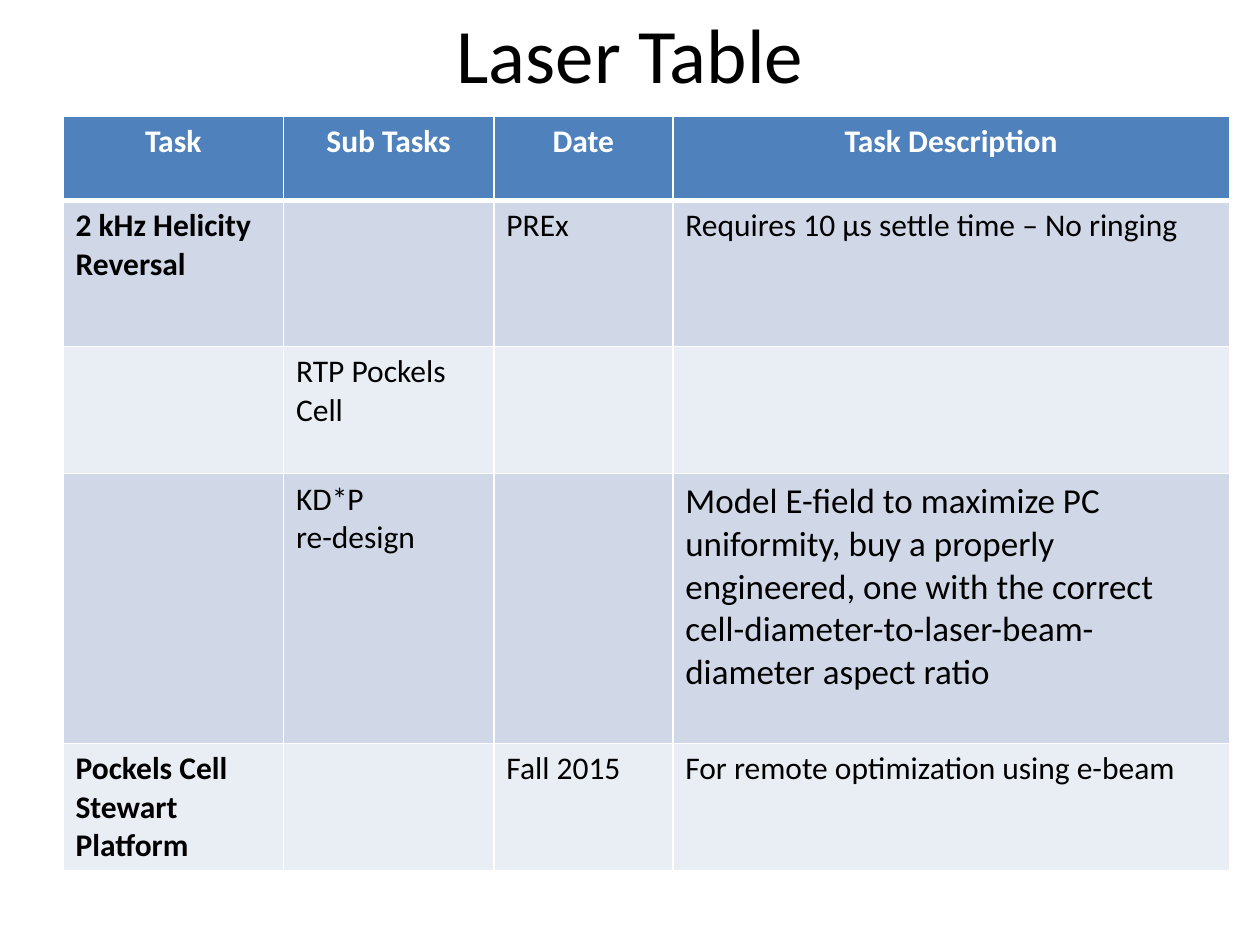
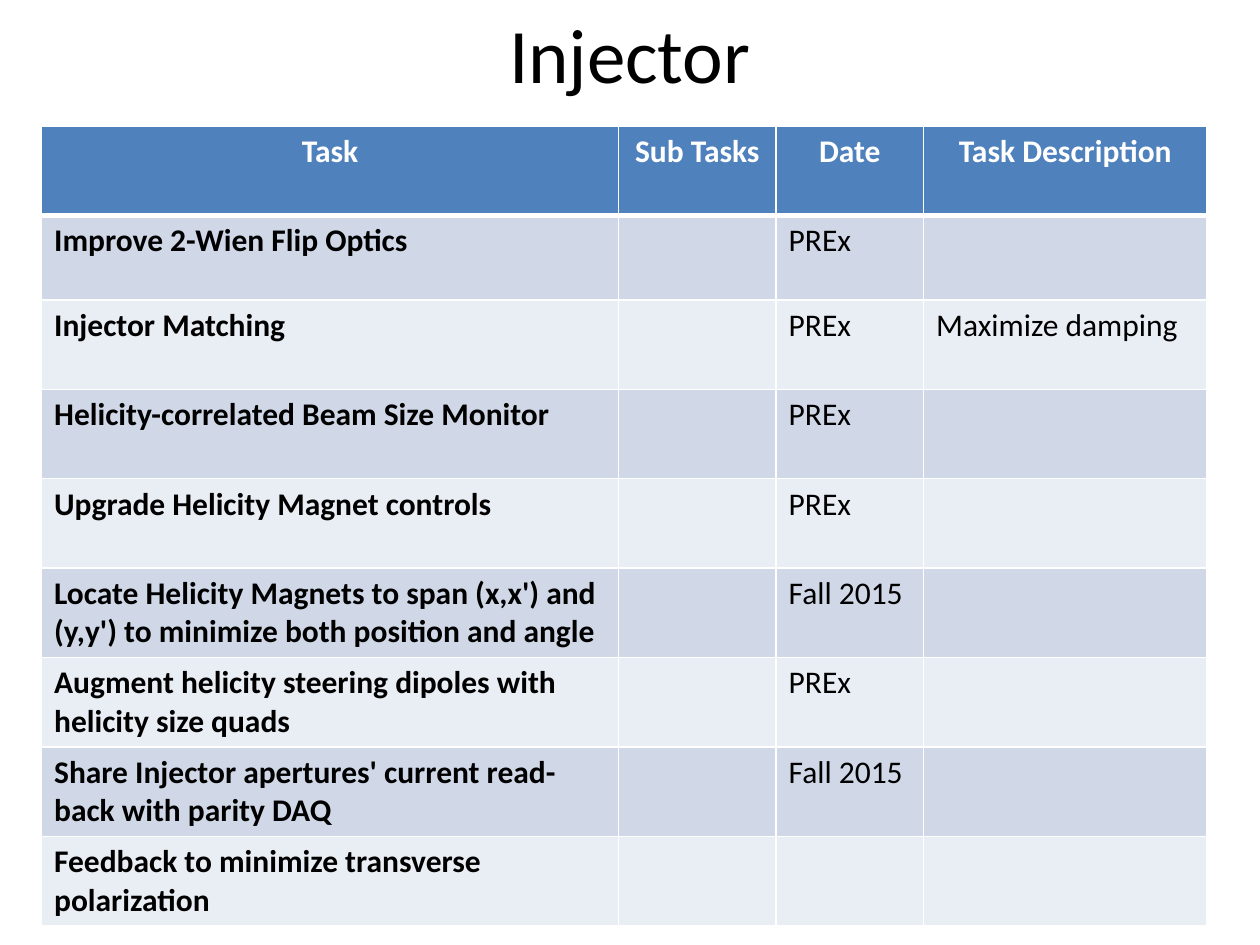
from lxml import etree
from pptx import Presentation
from pptx.dml.color import RGBColor
from pptx.enum.text import MSO_ANCHOR, PP_ALIGN
from pptx.oxml.ns import qn
from pptx.util import Inches, Pt

CENTER, LEFT = PP_ALIGN.CENTER, PP_ALIGN.LEFT
MIDDLE = MSO_ANCHOR.MIDDLE

# Content: the first column holds tasks and is bold
HEADINGS = ["Task", "Sub Tasks", "Date", "Task Description"]
SLIDES = [
    {
        "title": "Laser Table",
        "left": 0.5, "top": 0.92,
        "widths": [1.75, 1.67, 1.42, 4.42],
        "heights": [0.67, 1.16, 1.01, 2.14, 1.01],
        "rows": [
            ["2 kHz Helicity Reversal", "", "PREx",
             "Requires 10 µs settle time – No ringing"],
            ["", "RTP Pockels Cell", "", ""],
            ["", "KD*P\nre-design", "",
             "Model E-field to maximize PC uniformity, buy a properly "
             "engineered, one with the correct "
             "cell-diameter-to-laser-beam-diameter aspect ratio"],
            ["Pockels Cell Stewart Platform", "", "Fall 2015",
             "For remote optimization using e-beam"],
        ],
        "sizes": {(3, 3): 20},
    },
    {
        "title": "Injector",
        "left": 0.33, "top": 1,
        "widths": [4.58, 1.25, 1.17, 2.25],
        "heights": [0.71, 0.67] + [0.71] * 7,
        "rows": [
            ["Improve 2-Wien Flip Optics", "", "PREx", ""],
            ["Injector Matching", "", "PREx", "Maximize damping"],
            ["Helicity-correlated Beam Size Monitor", "", "PREx", ""],
            ["Upgrade Helicity Magnet controls", "", "PREx", ""],
            ["Locate Helicity Magnets to span (x,x') and (y,y') to minimize "
             "both position and angle", "", "Fall 2015", ""],
            ["Augment helicity steering dipoles with helicity size quads",
             "", "PREx", ""],
            ["Share Injector apertures' current read-back with parity DAQ",
             "", "Fall 2015", ""],
            ["Feedback to minimize transverse polarization", "", "", ""],
        ],
        "sizes": {},
    },
]

# Shared look
BLACK, WHITE = "000000", "FFFFFF"
HEADER_FILL = "4F81BD"
BAND_FILLS = ["D0D8E8", "E9EDF4"]
TITLE_FORMAT = {"name": "Calibri", "size": Pt(44), "bold": False}
CELL_SIZE = 18


def color(value):
    return RGBColor.from_string(value)


def write(frame, text, font_format, text_color, align):
    frame.text = text
    for para in frame.paragraphs:
        para.alignment = align
        for name, value in font_format.items():
            setattr(para.font, name, value)
        para.font.color.rgb = color(text_color)
        for span in para.runs:
            for name, value in font_format.items():
                setattr(span.font, name, value)
            span.font.color.rgb = color(text_color)


def add_title(page, text):
    box = page.shapes.add_textbox(Inches(0.5), 0, Inches(9), Inches(0.83))
    frame = box.text_frame
    frame.word_wrap = True
    frame.vertical_anchor = MIDDLE
    write(frame, text, TITLE_FORMAT, BLACK, CENTER)


def set_borders(cell, widths):
    properties = cell._tc.get_or_add_tcPr()
    for side, width in widths.items():
        line = etree.SubElement(properties, qn(f"a:ln{side}"), w=str(Pt(width)))
        fill = etree.SubElement(line, qn("a:solidFill"))
        etree.SubElement(fill, qn("a:srgbClr"), val=WHITE)


def add_task_table(page, content):
    rows = [HEADINGS] + content["rows"]
    widths, heights = content["widths"], content["heights"]
    table = page.shapes.add_table(
        len(rows), len(HEADINGS), Inches(content["left"]),
        Inches(content["top"]), Inches(sum(widths)), Inches(sum(heights))).table
    for column, width in zip(table.columns, widths):
        column.width = Inches(width)
    for row, height in zip(table.rows, heights):
        row.height = Inches(height)

    for row_index, texts in enumerate(rows):
        is_header = row_index == 0
        fill = HEADER_FILL if is_header else BAND_FILLS[(row_index - 1) % 2]
        # The thick rule under the header is shared with the first body row
        borders = {"L": 1, "R": 1, "T": 3 if row_index == 1 else 1,
                   "B": 3 if is_header else 1}
        for column_index, text in enumerate(texts):
            cell = table.cell(row_index, column_index)
            set_borders(cell, borders)
            cell.fill.solid()
            cell.fill.fore_color.rgb = color(fill)
            size = content["sizes"].get((row_index, column_index), CELL_SIZE)
            cell_format = {"name": "Calibri", "size": Pt(size),
                           "bold": is_header or column_index == 0}
            write(cell.text_frame, text, cell_format,
                  WHITE if is_header else BLACK,
                  CENTER if is_header else LEFT)


def main():
    deck = Presentation()
    deck.slide_width, deck.slide_height = Inches(10), Inches(7.5)
    blank = deck.slide_layouts[6]
    for content in SLIDES:
        page = deck.slides.add_slide(blank)
        add_title(page, content["title"])
        add_task_table(page, content)
    deck.save("out.pptx")


if __name__ == "__main__":
    main()
